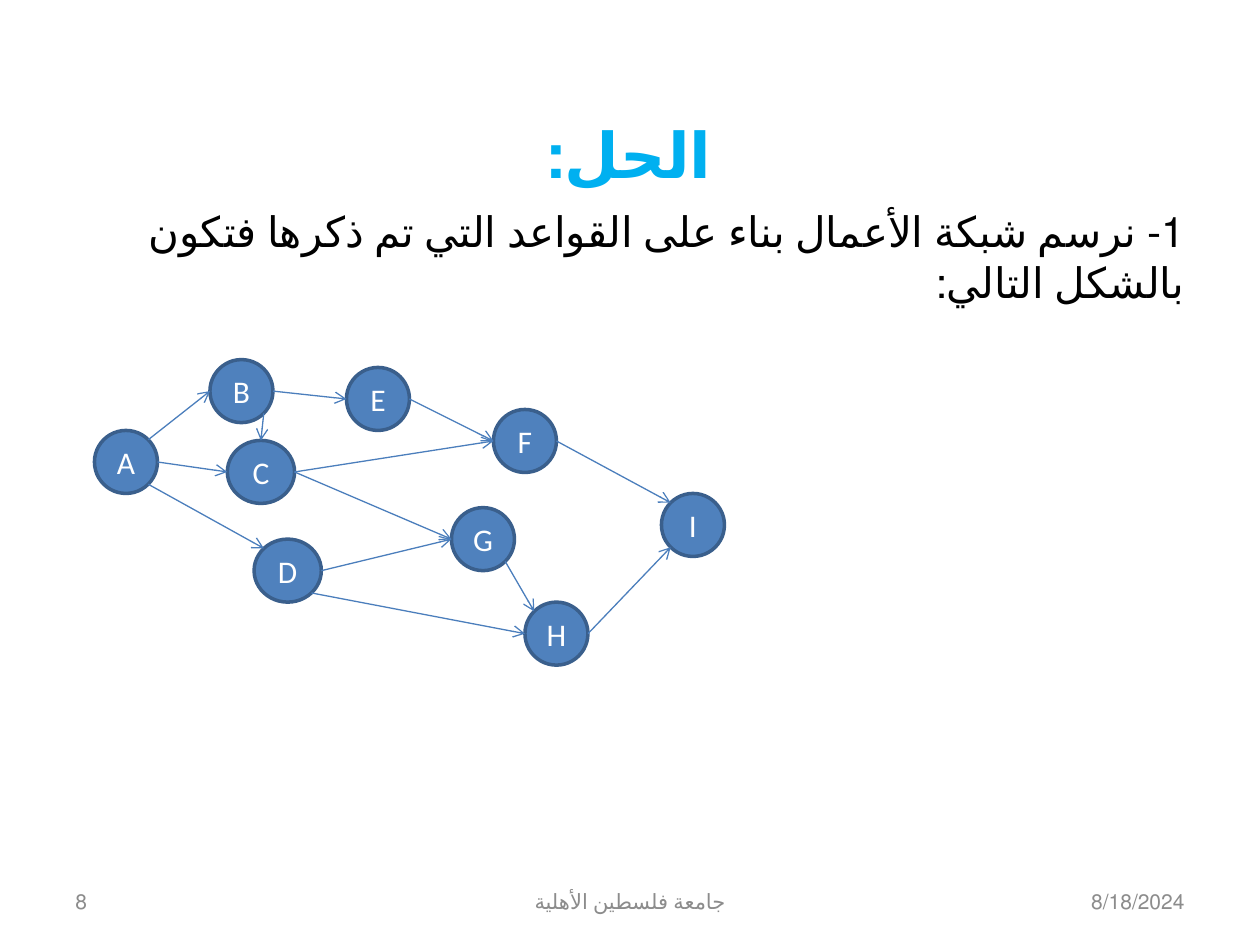
from math import cos, radians, sin

from lxml import etree
from pptx import Presentation
from pptx.dml.color import RGBColor
from pptx.enum.lang import MSO_LANGUAGE_ID
from pptx.enum.shapes import MSO_CONNECTOR, MSO_SHAPE
from pptx.enum.text import MSO_ANCHOR, PP_ALIGN
from pptx.oxml.ns import qn
from pptx.util import Inches, Pt

LEFT, CENTER, RIGHT = PP_ALIGN.LEFT, PP_ALIGN.CENTER, PP_ALIGN.RIGHT
TOP, MIDDLE = MSO_ANCHOR.TOP, MSO_ANCHOR.MIDDLE
OVAL, STRAIGHT = MSO_SHAPE.OVAL, MSO_CONNECTOR.STRAIGHT
ARABIC = MSO_LANGUAGE_ID.ARABIC

SKY = RGBColor(0x00, 0xB0, 0xF0)
BLACK = RGBColor(0x00, 0x00, 0x00)
GRAY = RGBColor(0x8C, 0x8C, 0x8C)
WHITE = RGBColor(0xFF, 0xFF, 0xFF)
NODE_FILL = RGBColor(0x4F, 0x81, 0xBD)
NODE_EDGE = RGBColor(0x3A, 0x5F, 0x8C)
ARROW = RGBColor(0x4B, 0x7E, 0xBC)

FONT = "Calibri"
COLUMNS, ROWS = 120, 90
CELL = Inches(10) // COLUMNS
NODE_HEIGHT = 6

# Name: left column, top row, width in columns
NODES = {
    "A": (9, 41, 6), "B": (20, 34.25, 6), "C": (21.65, 41.95, 6.4),
    "D": (24.2, 51.35, 6.4), "E": (33, 35, 6), "F": (47, 39, 6),
    "G": (43, 48.35, 6), "H": (50, 57.35, 6), "I": (63, 47, 6),
}

# Connection sites of an ellipse, counter-clockwise from the top in 45° steps
N, NW, W, SW, S, SE, E, NE = range(8)

LINKS = [
    ("A", NE, "B", W), ("B", SE, "C", N), ("A", E, "C", W),
    ("A", SE, "D", NW), ("B", E, "E", W), ("E", E, "F", W),
    ("C", E, "F", W), ("D", E, "G", W), ("C", E, "G", W),
    ("G", SE, "H", NW), ("D", SE, "H", W), ("F", E, "I", NW),
    ("H", E, "I", SW),
]


def grid(*cells):
    """Turn counts of grid cells into lengths."""
    return [round(CELL * count) for count in cells]


def style_paragraph(para, size, color, align):
    para.alignment = align
    para.font.name = FONT
    para.font.size = Pt(size)
    para.font.color.rgb = color


def add_rtl_text(page, text, cells, size, color, align, anchor=MIDDLE):
    box = page.shapes.add_textbox(*grid(*cells))
    frame = box.text_frame
    frame.word_wrap = True
    frame.vertical_anchor = anchor
    para = frame.paragraphs[0]
    span = para.add_run()
    span.text = text
    span.font.language_id = ARABIC
    style_paragraph(para, size, color, align)
    para._p.get_or_add_pPr().set("rtl", "1")
    return para


def add_node(page, name, left, top, width):
    node = page.shapes.add_shape(OVAL, *grid(left, top, width, NODE_HEIGHT))
    node.shadow.inherit = False
    node.fill.solid()
    node.fill.fore_color.rgb = NODE_FILL
    node.line.color.rgb = NODE_EDGE
    node.line.width = Pt(2)
    node.text_frame.vertical_anchor = MIDDLE
    para = node.text_frame.paragraphs[0]
    para.text = name
    style_paragraph(para, 18, WHITE, CENTER)
    return node


def site_point(node, site):
    """Position of a connection site on the rim of an oval node."""
    angle = radians(90 + 45 * site)
    x = node.left + node.width / 2 * (1 + cos(angle))
    y = node.top + node.height / 2 * (1 - sin(angle))
    return round(x), round(y)


def add_link(page, start, start_site, end, end_site):
    link = page.shapes.add_connector(
        STRAIGHT, *site_point(start, start_site), *site_point(end, end_site))
    link.line.color.rgb = ARROW
    link.line.width = Pt(0.75)
    etree.SubElement(link.line._get_or_add_ln(), qn("a:tailEnd"), type="arrow")
    etree.SubElement(link._element.spPr, qn("a:effectLst"))
    # The library's own joining knows only the four sites of a rectangle
    joints = link._element.find(".//" + qn("p:cNvCxnSpPr"))
    for tag, node, site in (("a:stCxn", start, start_site),
                            ("a:endCxn", end, end_site)):
        etree.SubElement(joints, qn(tag), id=str(node.shape_id), idx=str(site))


def main():
    deck = Presentation()
    deck.slide_width, deck.slide_height = grid(COLUMNS, ROWS)
    page = deck.slides.add_slide(deck.slide_layouts[6])

    title = add_rtl_text(page, "الحل:", (6, 10.3, 108, 8.6), 36, SKY, CENTER)
    title.font.bold = True
    body = add_rtl_text(
        page,
        "1- نرسم شبكة الأعمال بناء على القواعد التي تم ذكرها فتكون بالشكل التالي:",
        (6, 19, 108, 61.4), 24, BLACK, RIGHT, TOP)
    body.space_before = Pt(4.8)

    for text, left, width, align in (
            ("8/18/2024", 86, 28, RIGHT),
            ("جامعة فلسطين الأهلية", 41, 38, CENTER),
            ("8", 6, 28, LEFT)):
        add_rtl_text(page, text, (left, 83.4, width, 4.8), 12, GRAY, align)

    nodes = {name: add_node(page, name, *cells) for name, cells in NODES.items()}
    for start, start_site, end, end_site in LINKS:
        add_link(page, nodes[start], start_site, nodes[end], end_site)

    deck.save("out.pptx")


if __name__ == "__main__":
    main()
